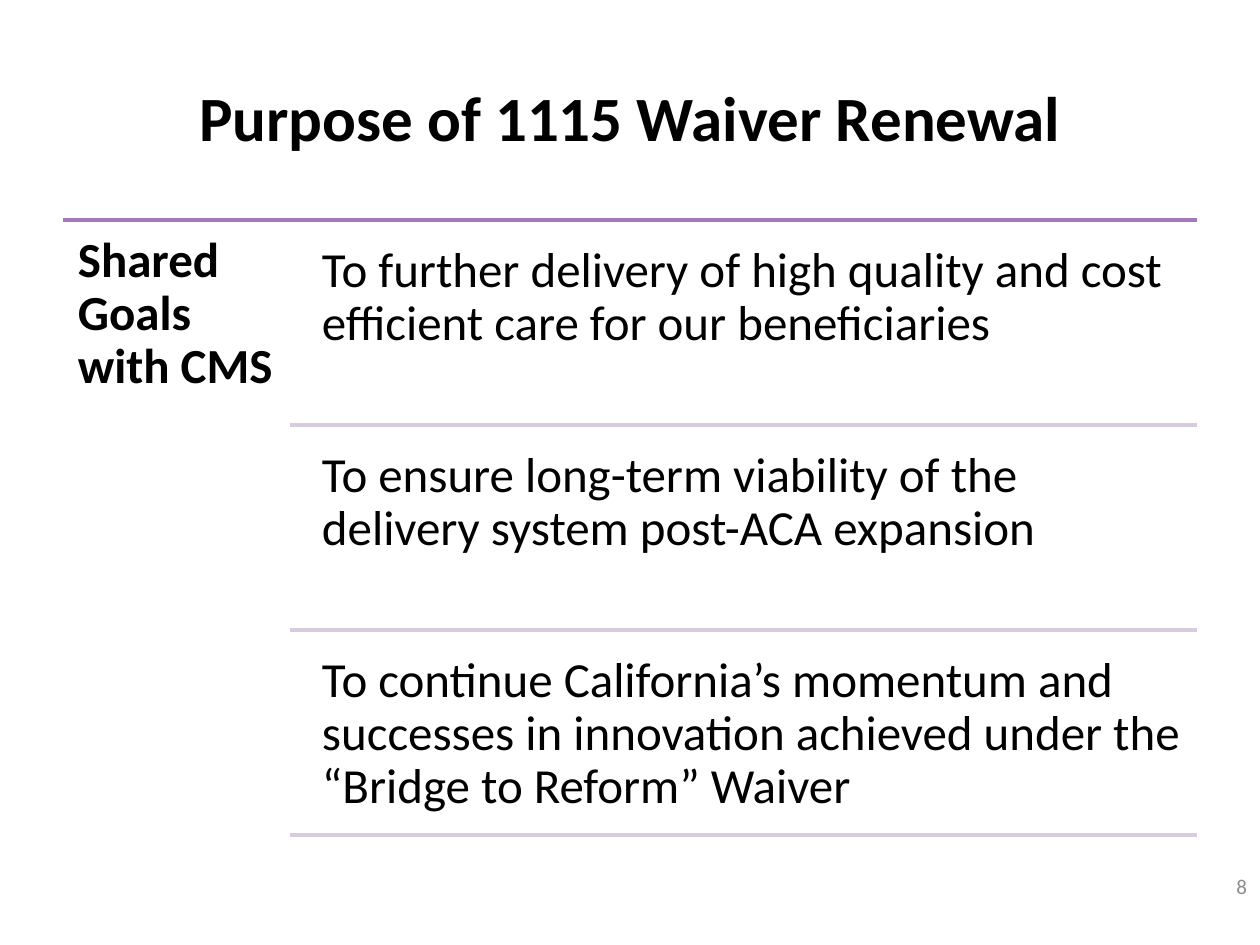
from lxml.etree import SubElement
from pptx import Presentation
from pptx.dml.color import RGBColor
from pptx.enum.shapes import MSO_CONNECTOR
from pptx.enum.text import MSO_ANCHOR, PP_ALIGN
from pptx.oxml.ns import qn
from pptx.util import Emu, Pt

BLACK = RGBColor(0x00, 0x00, 0x00)
GRAY = RGBColor(0x8C, 0x8C, 0x8C)
PURPLE = RGBColor(0xA3, 0x79, 0xBB)
LILAC = RGBColor(0xD7, 0xCB, 0xE0)

GOALS = [
    "To further delivery of high quality and cost efficient care for our beneficiaries",
    "To ensure long-term viability of the delivery system post-ACA expansion",
    "To continue California’s momentum and successes in innovation achieved under the “Bridge to Reform” Waiver",
]
LIST_TOP = 220
ROW_HEIGHT = 205
RIGHT = 1197


def px(value):
    return Emu(round(value * 914400 / 126))


def add_text(text, left, top, width, height, size, color=BLACK, bold=False,
             align=PP_ALIGN.LEFT, anchor=MSO_ANCHOR.TOP, inset=(13, 6), spacing=1.0):
    shape = slide.shapes.add_textbox(px(left), px(top), px(width), px(height))
    frame = shape.text_frame
    frame.word_wrap = True
    frame.vertical_anchor = anchor
    frame.margin_left = frame.margin_right = px(inset[0])
    frame.margin_top = frame.margin_bottom = px(inset[1])
    paragraph = frame.paragraphs[0]
    paragraph.alignment = align
    paragraph.line_spacing = spacing
    run = paragraph.add_run()
    run.text = text
    run.font.name = "Calibri"
    run.font.size = Pt(size)
    run.font.bold = bold
    run.font.color.rgb = color


presentation = Presentation()
presentation.slide_width = px(1260)
presentation.slide_height = px(945)
slide = presentation.slides.add_slide(presentation.slide_layouts[6])

add_text("Purpose of 1115 Waiver Renewal", 63, 38, 1134, 157, 36, bold=True,
         align=PP_ALIGN.CENTER, anchor=MSO_ANCHOR.MIDDLE)
add_text("Shared Goals with CMS", 63, LIST_TOP, 227, 624, 28, bold=True,
         inset=(15, 15), spacing=0.9)

rules = [(63, LIST_TOP, PURPLE)]
for row, goal in enumerate(GOALS):
    row_top = LIST_TOP + row * ROW_HEIGHT
    add_text(goal, 307, row_top + 10, 891, 195, 28, inset=(15, 15), spacing=0.9)
    rules.append((290, row_top + ROW_HEIGHT, LILAC))

for left, top, color in rules:
    rule = slide.shapes.add_connector(MSO_CONNECTOR.STRAIGHT, px(left), px(top), px(RIGHT), px(top))
    rule.line.color.rgb = color
    rule.line.width = Pt(2)
    SubElement(rule._element.spPr, qn("a:effectLst"))

add_text("8", 966, 861, 294, 50, 12, color=GRAY,
         align=PP_ALIGN.RIGHT, anchor=MSO_ANCHOR.MIDDLE)

presentation.save("out.pptx")
